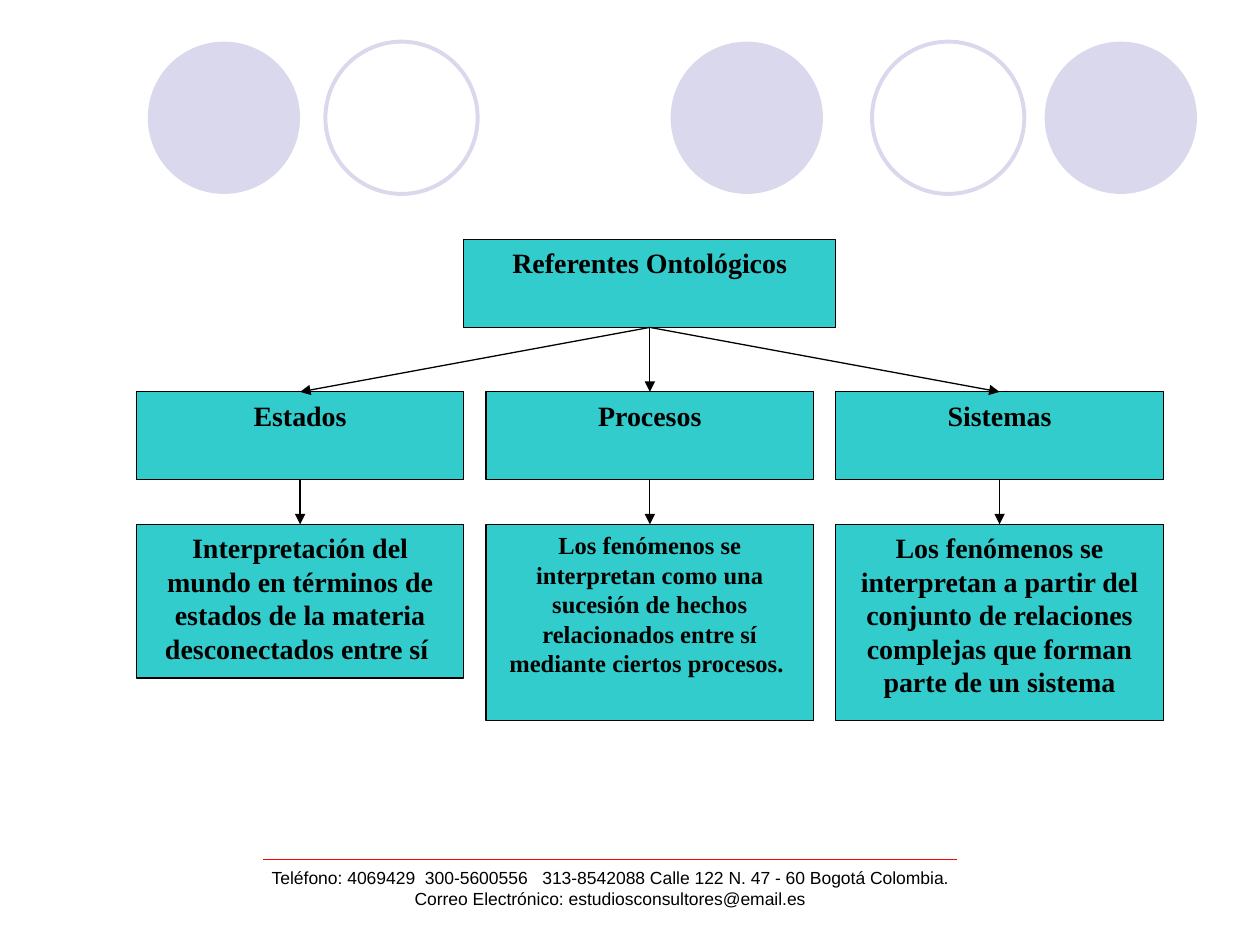
from lxml.etree import SubElement
from pptx import Presentation
from pptx.dml.color import RGBColor
from pptx.enum.shapes import MSO_CONNECTOR, MSO_SHAPE
from pptx.enum.text import MSO_ANCHOR, PP_ALIGN
from pptx.oxml.ns import qn
from pptx.util import Cm, Pt

LAVENDER = RGBColor(0xD9, 0xD8, 0xEC)
TURQUOISE = RGBColor(0x33, 0xCC, 0xCC)
BLACK = RGBColor(0, 0, 0)
RED = RGBColor(0xFF, 0, 0)

TOP, BOTTOM = 0, 2
CIRCLES = [(13.52, True), (21.06, True), (2.98, True), (17.58, False), (6.56, False)]
COLUMN_LEFT, COLUMN_STEP, COLUMN_WIDTH = 2.75, 7.05, 6.6
HEADING_HEIGHT = 1.77
REFERENTS = [
    ("Estados",
     "Interpretación del mundo en términos de estados de la materia desconectados entre sí ",
     3.1, 16),
    ("Procesos",
     "Los fenómenos se interpretan como una sucesión de hechos relacionados entre sí "
     "mediante ciertos procesos. ",
     3.96, 14),
    ("Sistemas",
     "Los fenómenos se interpretan a partir del conjunto de relaciones complejas que "
     "forman parte de un sistema",
     3.96, 16),
]
CONTACT = [
    "Teléfono: 4069429  300-5600556   313-8542088 Calle 122 N. 47 - 60 Bogotá Colombia.",
    "Correo Electrónico: estudiosconsultores@email.es",
]


def write_text(frame, lines, font="Times New Roman", size=16, bold=True):
    """Fill a text frame with centred, top-anchored paragraphs."""
    frame.word_wrap = True
    frame.vertical_anchor = MSO_ANCHOR.TOP
    for index, line in enumerate(lines):
        paragraph = frame.paragraphs[0] if index == 0 else frame.add_paragraph()
        paragraph.alignment = PP_ALIGN.CENTER
        run = paragraph.add_run()
        run.text = line
        run.font.name = font
        run.font.size = Pt(size)
        run.font.bold = bold
        run.font.color.rgb = BLACK


def add_circle(slide, left, filled):
    """Add one decorative circle, either solid or outlined."""
    circle = slide.shapes.add_shape(
        MSO_SHAPE.OVAL, Cm(left), Cm(0.84), Cm(3.07), Cm(3.07))
    circle.shadow.inherit = False
    if filled:
        circle.fill.solid()
        circle.fill.fore_color.rgb = LAVENDER
        circle.line.fill.background()
    else:
        circle.fill.background()
        circle.line.color.rgb = LAVENDER
        circle.line.width = Pt(2.25)


def add_box(slide, text, left, top, width, height, size=16):
    """Add a turquoise box of the diagram."""
    box = slide.shapes.add_shape(
        MSO_SHAPE.RECTANGLE, Cm(left), Cm(top), Cm(width), Cm(height))
    box.shadow.inherit = False
    box.fill.solid()
    box.fill.fore_color.rgb = TURQUOISE
    box.line.color.rgb = BLACK
    box.line.width = Pt(0.75)
    write_text(box.text_frame, [text], size=size)
    return box


def add_line(slide, color, left=0, top=0, right=0, bottom=0):
    """Add a thin straight connector without shadow."""
    line = slide.shapes.add_connector(
        MSO_CONNECTOR.STRAIGHT, Cm(left), Cm(top), Cm(right), Cm(bottom))
    line.line.color.rgb = color
    line.line.width = Pt(0.75)
    SubElement(line._element.spPr, qn("a:effectLst"))
    return line


def add_arrow(slide, parent, child):
    """Join the bottom of one box to the top of another with an arrow."""
    arrow = add_line(slide, BLACK)
    arrow.begin_connect(parent, BOTTOM)
    arrow.end_connect(child, TOP)
    SubElement(arrow.line._get_or_add_ln(), qn("a:tailEnd"), type="triangle")


def add_footer(slide):
    """Add the contact details below their red rule."""
    add_line(slide, RED, 5.31, 17.32, 19.3, 17.32)
    contact = slide.shapes.add_textbox(Cm(3.89), Cm(17.35), Cm(16.81), Cm(1.27))
    write_text(contact.text_frame, CONTACT, font="Arial", size=10, bold=False)


def add_diagram(slide):
    """Add the root box, its three referents and their descriptions."""
    root = add_box(slide, "Referentes Ontológicos", 9.35, 4.83, 7.5, HEADING_HEIGHT)
    for column, (name, description, height, size) in enumerate(REFERENTS):
        left = COLUMN_LEFT + column * COLUMN_STEP
        heading = add_box(slide, name, left, 7.9, COLUMN_WIDTH, HEADING_HEIGHT)
        detail = add_box(slide, description, left, 10.57, COLUMN_WIDTH, height, size)
        add_arrow(slide, root, heading)
        add_arrow(slide, heading, detail)


def main():
    """Build and save the slide."""
    presentation = Presentation()
    presentation.slide_width = Cm(25.4)
    presentation.slide_height = Cm(19.05)
    slide = presentation.slides.add_slide(presentation.slide_layouts[6])
    for left, filled in CIRCLES:
        add_circle(slide, left, filled)
    add_footer(slide)
    add_diagram(slide)
    presentation.save("out.pptx")


if __name__ == "__main__":
    main()
